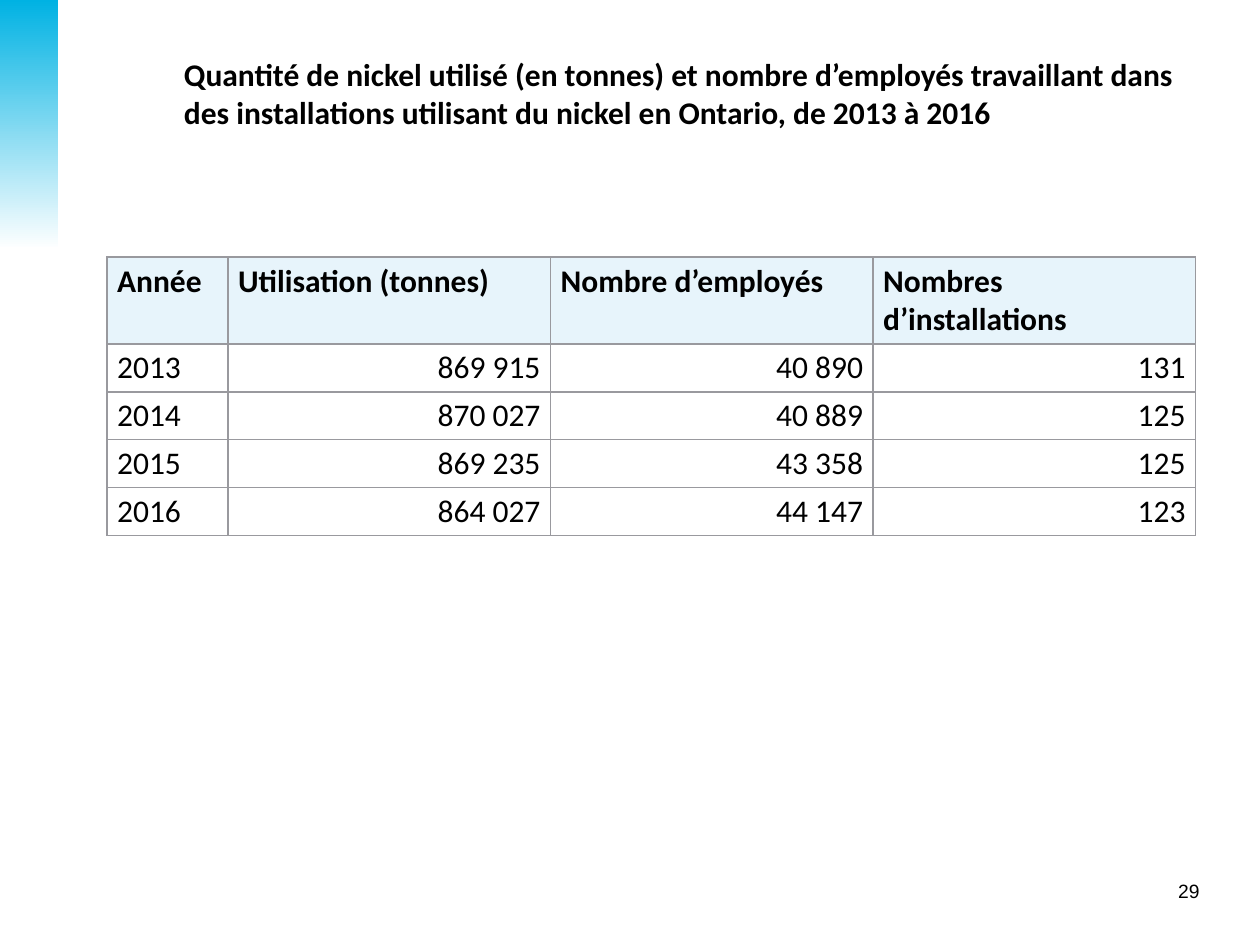
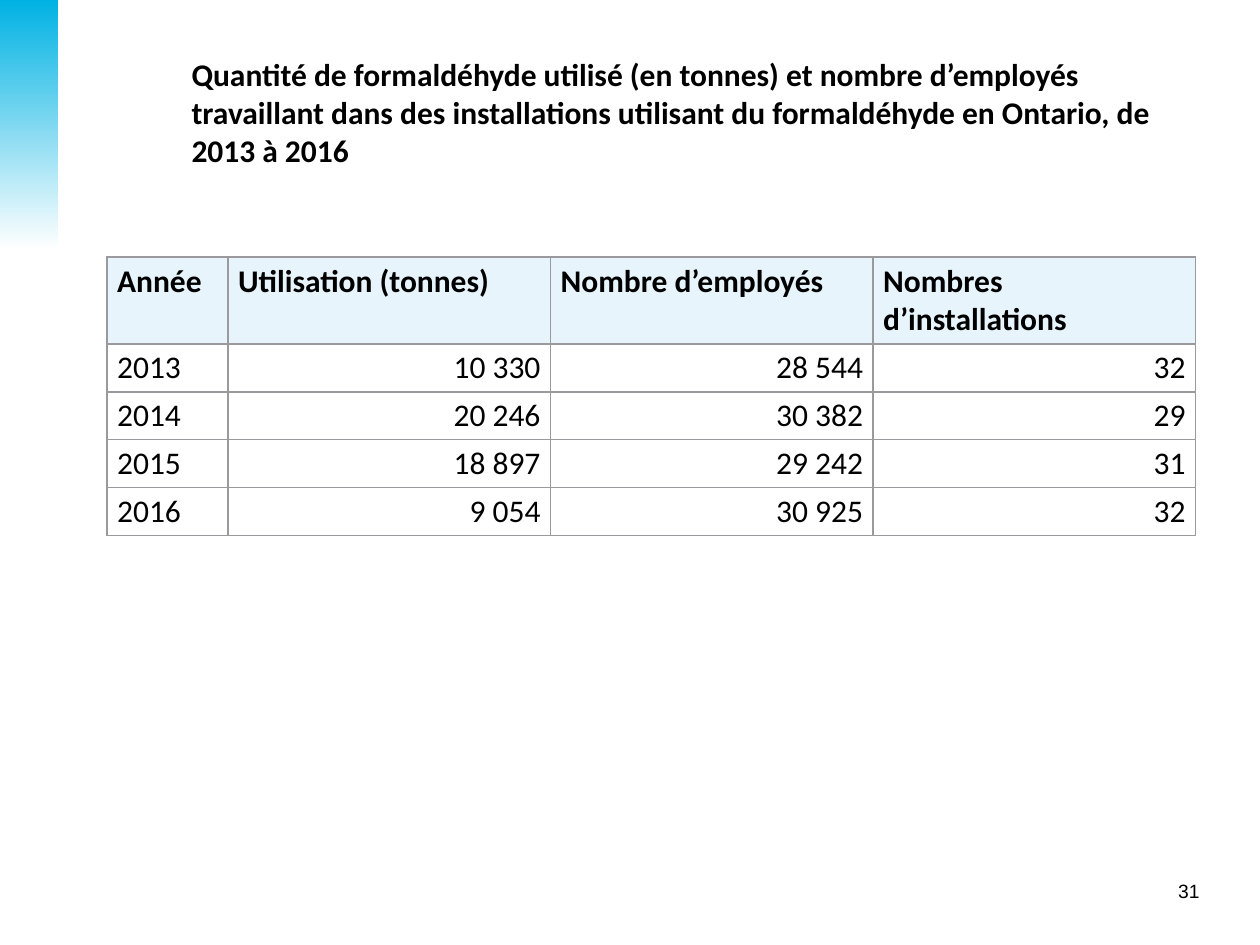
from dataclasses import dataclass

from lxml.etree import SubElement
from pptx import Presentation
from pptx.dml.color import RGBColor
from pptx.enum.shapes import MSO_SHAPE as Shape
from pptx.enum.text import MSO_ANCHOR as Anchor, PP_ALIGN as Align
from pptx.oxml.ns import qn
from pptx.util import Inches, Pt

BLACK = RGBColor(0x00, 0x00, 0x00)
WHITE = RGBColor(0xFF, 0xFF, 0xFF)
BAND_BLUE = RGBColor(0x00, 0xB2, 0xE3)
HEADER_BLUE = RGBColor(0xE7, 0xF4, 0xFB)
BORDER_GREY = RGBColor(0x99, 0x99, 0x9E)

HEADERS = ("Année", "Utilisation (tonnes)", "Nombre d’employés", "Nombres d’installations")
COLUMN_WIDTHS = (0.96, 2.56, 2.56, 2.56)
HEADER_HEIGHT, ROW_HEIGHT = 0.69, 0.38
FIRST_YEAR = 2013
THOUSANDS_SEPARATOR = " "


@dataclass(frozen=True)
class SubstanceSlide:
    substance: str
    page: int
    title_left: float
    title_width: float
    title_height: float
    yearly_figures: tuple[tuple[int, int, int], ...]

    @property
    def title(self) -> str:
        return (
            f"Quantité de {self.substance} utilisé (en tonnes) et nombre d’employés "
            f"travaillant dans des installations utilisant du {self.substance} "
            "en Ontario, de 2013 à 2016"
        )


SUBSTANCE_SLIDES = (
    SubstanceSlide("nickel", 29, 1.36, 8.14, 0.76, (
        (869915, 40890, 131),
        (870027, 40889, 125),
        (869235, 43358, 125),
        (864027, 44147, 123),
    )),
    SubstanceSlide("formaldéhyde", 31, 1.42, 8.07, 1.08, (
        (10330, 28544, 32),
        (20246, 30382, 29),
        (18897, 29242, 31),
        (9054, 30925, 32),
    )),
)


def write_text(text_frame, text: str, *, size: int = 18, font: str = "Calibri",
               bold: bool = False, align: Align = Align.LEFT) -> None:
    text_frame.word_wrap = True
    paragraph = text_frame.paragraphs[0]
    paragraph.alignment = align
    run = paragraph.add_run()
    run.text = text
    run.font.size = Pt(size)
    run.font.name = font
    run.font.bold = bold
    run.font.color.rgb = BLACK


def add_band(slide) -> None:
    band = slide.shapes.add_shape(Shape.RECTANGLE, 0, 0, Inches(0.46), Inches(1.98))
    band.shadow.inherit = False
    band.line.fill.background()
    band.fill.gradient()
    band.fill.gradient_angle = 270
    for stop, color in zip(band.fill.gradient_stops, (BAND_BLUE, WHITE)):
        stop.color.rgb = color


def add_page_number(slide, page: int) -> None:
    box = slide.shapes.add_textbox(Inches(8.45), Inches(6.93), Inches(1.17), Inches(0.29))
    write_text(box.text_frame, str(page), size=11, font="Arial", align=Align.RIGHT)


def set_title(slide, content: SubstanceSlide) -> None:
    title = slide.shapes.title
    title.left, title.top = Inches(content.title_left), Inches(0.39)
    title.width, title.height = Inches(content.title_width), Inches(content.title_height)
    title.text_frame.vertical_anchor = Anchor.TOP
    write_text(title.text_frame, content.title, bold=True)


def add_borders(cell) -> None:
    properties = cell._tc.get_or_add_tcPr()
    for side in ("a:lnL", "a:lnR", "a:lnT", "a:lnB"):
        line = SubElement(properties, qn(side), w=str(Pt(1)))
        fill = SubElement(line, qn("a:solidFill"))
        SubElement(fill, qn("a:srgbClr"), val=str(BORDER_GREY))


def format_cell(cell, text: str, *, is_header: bool, align: Align) -> None:
    cell.margin_left = cell.margin_right = Inches(0.08)
    cell.margin_top = cell.margin_bottom = Inches(0.04)
    add_borders(cell)
    if is_header:
        cell.fill.solid()
        cell.fill.fore_color.rgb = HEADER_BLUE
    else:
        cell.fill.background()
    write_text(cell.text_frame, text, bold=is_header, align=align)


def add_figures_table(slide, yearly_figures: tuple[tuple[int, int, int], ...]) -> None:
    rows = [HEADERS]
    for year, figures in enumerate(yearly_figures, FIRST_YEAR):
        numbers = (f"{figure:,}".replace(",", THOUSANDS_SEPARATOR) for figure in figures)
        rows.append((str(year), *numbers))
    height = HEADER_HEIGHT + ROW_HEIGHT * len(yearly_figures)
    table = slide.shapes.add_table(
        len(rows), len(HEADERS), Inches(0.85), Inches(2.04),
        Inches(sum(COLUMN_WIDTHS)), Inches(height),
    ).table
    table.first_row = table.horz_banding = False
    for column, width in zip(table.columns, COLUMN_WIDTHS):
        column.width = Inches(width)
    for row_index, values in enumerate(rows):
        is_header = row_index == 0
        table.rows[row_index].height = Inches(HEADER_HEIGHT if is_header else ROW_HEIGHT)
        for column_index, text in enumerate(values):
            align = Align.LEFT if is_header or column_index == 0 else Align.RIGHT
            format_cell(table.cell(row_index, column_index), text,
                        is_header=is_header, align=align)


def main() -> None:
    presentation = Presentation()
    presentation.slide_width, presentation.slide_height = Inches(10), Inches(7.5)
    title_only = presentation.slide_layouts.get_by_name("Title Only")
    for content in SUBSTANCE_SLIDES:
        slide = presentation.slides.add_slide(title_only)
        add_band(slide)
        add_page_number(slide, content.page)
        set_title(slide, content)
        add_figures_table(slide, content.yearly_figures)
    presentation.save("out.pptx")


if __name__ == "__main__":
    main()
